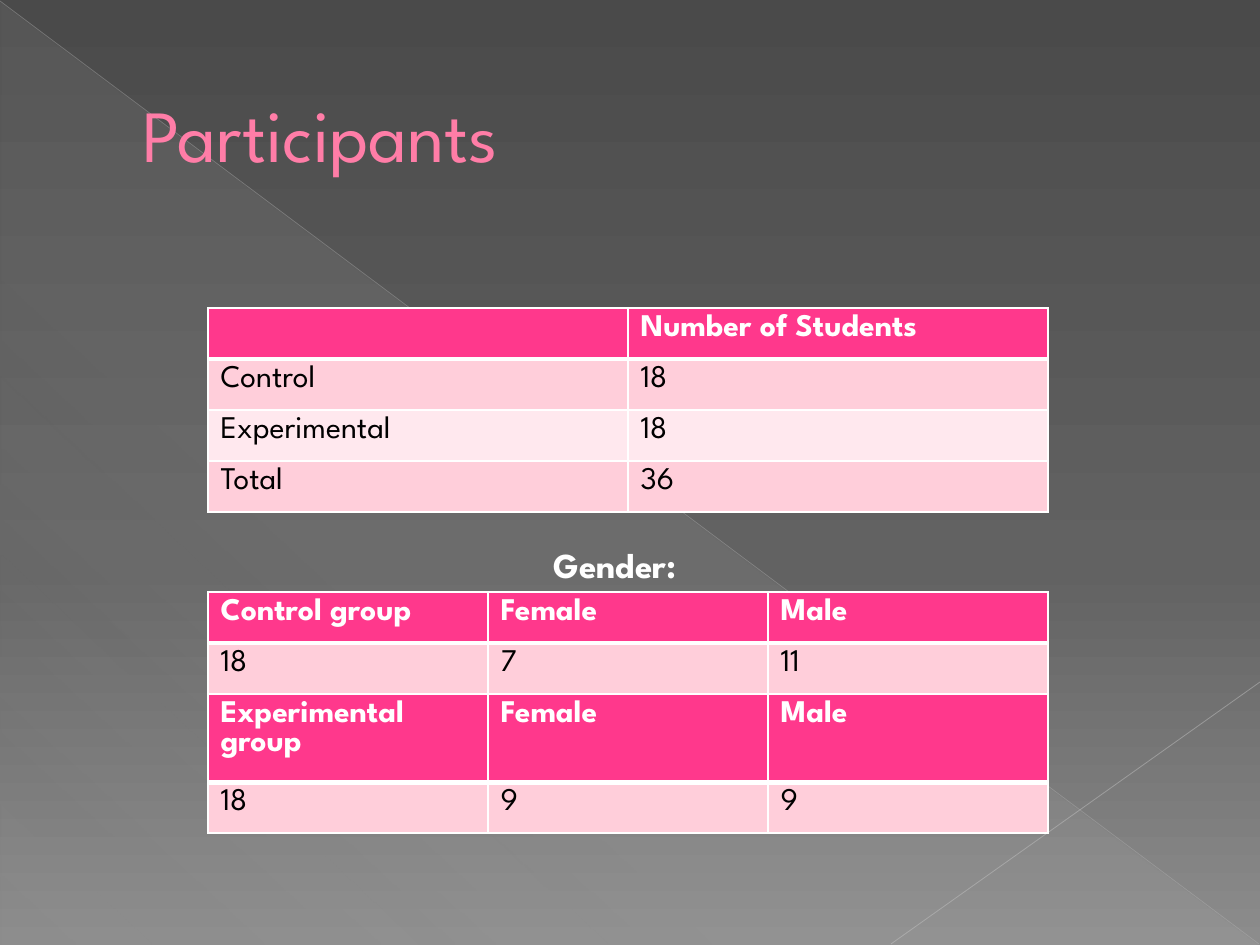
from lxml.etree import SubElement as Sub
from pptx import Presentation
from pptx.dml.color import RGBColor as RGB
from pptx.enum.shapes import MSO_CONNECTOR as LINK, MSO_SHAPE as SHAPE
from pptx.enum.text import MSO_ANCHOR as ANCHOR
from pptx.oxml import parse_xml
from pptx.oxml.ns import nsdecls, qn
from pptx.util import Inches, Pt

FONT = "League Spartan"
WHITE, BLACK = RGB(255, 255, 255), RGB(0, 0, 0)
PINK, PLUM = RGB(0xFF, 0x7D, 0xA7), RGB(0xB1, 0x27, 0x61)
HOT, ROSE, BLUSH = RGB(0xFF, 0x38, 0x8C), RGB(0xFF, 0xCE, 0xDA), RGB(0xFF, 0xE8, 0xEE)
DARK, GREY, ASH = RGB(0x4A, 0x4A, 0x4A), RGB(0x62, 0x62, 0x62), RGB(0x8C, 0x8C, 0x8C)
MIST = RGB(0xD2, 0xD2, 0xD2)
SILVER, CLOUD = RGB(0xBF, 0xBF, 0xBF), RGB(0xC6, 0xC6, 0xC6)
ROW = 51
LEFT, WIDTH = 208, 840


def px(n):
    return round(n * Inches(1) / 126)


def box(*sizes):
    return [px(n) for n in sizes]


def fade(fill, root, stops, angle):
    """Fill with a gradient of (percent, colour, opacity) stops, angle clockwise."""
    fill.gradient()
    fill.gradient_angle = 360 - angle
    stop_list = root.find(".//" + qn("a:gsLst"))
    for old in list(stop_list):
        stop_list.remove(old)
    for pos, color, alpha in stops:
        stop = Sub(stop_list, qn("a:gs"), pos=str(pos * 1000))
        tint = Sub(stop, qn("a:srgbClr"), val=str(color))
        Sub(tint, qn("a:alpha"), val=str(alpha * 1000))


def add_wedge(slide):
    wedge = slide.shapes.add_shape(SHAPE.RIGHT_TRIANGLE, *box(1, 2, 1258, 943))
    wedge.shadow.inherit = False
    wedge.line.fill.background()
    stops = [(0, MIST, 10), (70, MIST, 8), (100, MIST, 1)]
    fade(wedge.fill, wedge.element, stops, 133)


def add_line(slide, ends, color, width, alpha):
    link = slide.shapes.add_connector(LINK.STRAIGHT, *box(*ends))
    link.line.color.rgb = color
    link.line.width = Pt(width)
    tint = link.element.find(".//" + qn("a:ln")).find(".//" + qn("a:srgbClr"))
    Sub(tint, qn("a:alpha"), val=str(alpha * 1000))
    Sub(link.element.spPr, qn("a:effectLst"))


def style(para, size, color, bold=False):
    font = para.font
    font.name, font.size, font.bold = FONT, Pt(size), bold
    font.color.rgb = color


def add_text(slide, place, text, size, color, bold=False, wrap=False):
    frame = slide.shapes.add_textbox(*box(*place)).text_frame
    frame.word_wrap = wrap
    para = frame.paragraphs[0]
    para.text = text
    style(para, size, color, bold)
    return frame


def add_title(slide, text):
    frame = add_text(slide, (63, 37, 1134, 193), text, 42, PINK, wrap=True)
    frame.vertical_anchor = ANCHOR.MIDDLE
    para = frame.paragraphs[0]
    props = para._p.get_or_add_pPr()
    props.set("marL", str(px(67)))
    props.set("indent", "0")
    edge = parse_xml(
        f'<a:ln {nsdecls("a")} w="{Pt(0.5)}"><a:solidFill>'
        f'<a:srgbClr val="{PLUM}"/></a:solidFill></a:ln>')
    para.runs[0].font._element.insert(0, edge)


def set_edges(cell, top, bottom):
    props = cell._tc.get_or_add_tcPr()
    widths = {"L": 1, "R": 1, "T": top, "B": bottom}
    for spot, (side, width) in enumerate(widths.items()):
        props.insert(spot, parse_xml(
            f'<a:ln{side} {nsdecls("a")} w="{Pt(width)}"><a:solidFill>'
            f'<a:srgbClr val="{WHITE}"/></a:solidFill></a:ln{side}>'))


def add_grid(slide, top, rows, head=ROW):
    """Draw a table whose first row, of height head, is the header."""
    heights = [head] + [ROW] * (len(rows) - 1)
    cols = len(rows[0])
    place = box(LEFT, top, WIDTH, sum(heights))
    grid = slide.shapes.add_table(len(rows), cols, *place).table
    grid.horz_banding = False
    for col in grid.columns:
        col.width = px(WIDTH / cols)
    for i, texts in enumerate(rows):
        grid.rows[i].height = px(heights[i])
        first = i == 0
        for j, text in enumerate(texts):
            cell = grid.cell(i, j)
            cell.text = text
            style(cell.text_frame.paragraphs[0], 18, WHITE if first else BLACK, first)
            cell.fill.solid()
            cell.fill.fore_color.rgb = HOT if first else ROSE if i % 2 else BLUSH
            set_edges(cell, 3 if i == 1 else 1, 3 if first else 1)


def main():
    deck = Presentation()
    deck.slide_width, deck.slide_height = box(1260, 945)
    slide = deck.slides.add_slide(deck.slide_layouts[6])
    stops = [(0, DARK, 100), (60, GREY, 100), (100, ASH, 100)]
    fade(slide.background.fill, slide.element, stops, 90)
    add_wedge(slide)
    add_line(slide, (0, 1, 1259, 944), SILVER, 0.39, 35)
    add_line(slide, (1260, 682, 891, 944), CLOUD, 0.47, 45)
    add_title(slide, "Participants")
    add_text(slide, (541, 537, 166, 55), "Gender:", 20, WHITE, bold=True)
    add_grid(slide, 592, [("Control group", "Female", "Male"), ("18", "7", "11")])
    add_grid(slide, 694, [("Experimental group", "Female", "Male"), ("18", "9", "9")], 88)
    add_grid(slide, 308, [("", "Number of Students"), ("Control", "18"),
                          ("Experimental", "18"), ("Total", "36")])
    deck.save("out.pptx")


if __name__ == "__main__":
    main()
